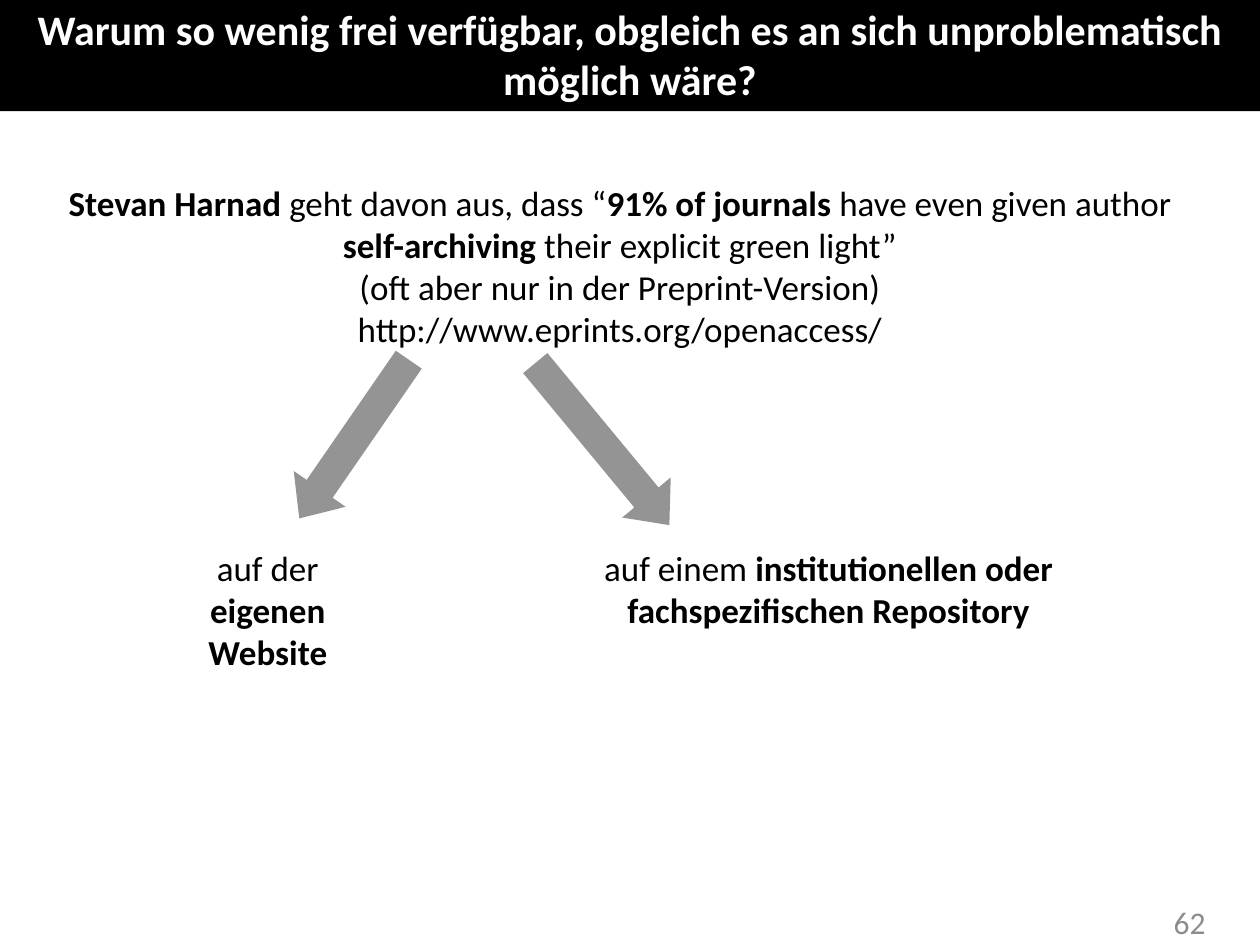
"""Build the slide on freely available publications and self-archiving."""
from lxml import etree
from pptx import Presentation
from pptx.dml.color import RGBColor
from pptx.enum.shapes import MSO_SHAPE
from pptx.enum.text import MSO_ANCHOR, MSO_AUTO_SIZE, PP_ALIGN
from pptx.oxml.ns import qn
from pptx.util import Pt

CENTER, RIGHT = PP_ALIGN.CENTER, PP_ALIGN.RIGHT
TOP, MIDDLE = MSO_ANCHOR.TOP, MSO_ANCHOR.MIDDLE
NO_AUTOFIT = MSO_AUTO_SIZE.NONE
DOWN_ARROW = MSO_SHAPE.DOWN_ARROW
TITLE_ONLY = 5
FONT = "Calibri"
COLORS = {"black": "000000", "white": "FFFFFF", "number": "8C8C8C"}


def color(name):
    return RGBColor.from_string(COLORS[name])


def place(shape, left, top, width, height):
    shape.left, shape.top = Pt(left), Pt(top)
    shape.width, shape.height = Pt(width), Pt(height)


def write_text(shape, paragraphs, size=20, fill="black", align=CENTER, anchor=TOP):
    """Write paragraphs given as lists of (text, bold) runs."""
    frame = shape.text_frame
    frame.word_wrap = True
    frame.auto_size = NO_AUTOFIT
    frame.vertical_anchor = anchor
    for index, runs in enumerate(paragraphs):
        paragraph = frame.add_paragraph() if index else frame.paragraphs[0]
        paragraph.alignment = align
        for text, bold in runs:
            run = paragraph.add_run()
            run.text = text
            run.font.name = FONT
            run.font.size = Pt(size)
            run.font.bold = bold
            run.font.color.rgb = color(fill)


def add_title(slide, text):
    title = slide.shapes.title
    place(title, 0, -2, 720, 65.5)
    title.fill.solid()
    title.fill.fore_color.rgb = color("black")
    write_text(title, [[(text, True)]], size=24, fill="white", anchor=MIDDLE)


def add_text(slide, box, paragraphs, **text_format):
    shape = slide.shapes.add_textbox(*map(Pt, box))
    write_text(shape, paragraphs, **text_format)


def add_arrow(slide, box, rotation, opacity=42):
    arrow = slide.shapes.add_shape(DOWN_ARROW, *map(Pt, box))
    arrow.shadow.inherit = False
    arrow.rotation = rotation
    arrow.adjustments[0] = 0.5
    arrow.adjustments[1] = 0.57
    arrow.fill.solid()
    arrow.fill.fore_color.rgb = color("black")
    arrow.line.fill.background()
    solid_color = arrow.fill._xPr.find(qn("a:solidFill"))[0]
    etree.SubElement(solid_color, qn("a:alpha")).set("val", str(opacity * 1000))


def main():
    presentation = Presentation()
    presentation.slide_width, presentation.slide_height = Pt(720), Pt(540)
    slide = presentation.slides.add_slide(presentation.slide_layouts[TITLE_ONLY])

    add_title(slide, "Warum so wenig frei verfügbar, obgleich es an sich "
                     "unproblematisch möglich wäre?")
    add_text(slide, (31, 100, 646.5, 104.5), [
        [("Stevan Harnad ", True), ("geht davon aus, dass “", False),
         ("91% of journals ", True), ("have even given author ", False),
         ("self-archiving", True), (" their explicit green light”", False)],
        [("(oft aber nur in der Preprint-Version)", False)],
        [("http://www.eprints.org/openaccess/", False)],
    ])
    add_text(slide, (82, 309, 142, 80),
             [[("auf der ", False), ("eigenen Website", True)]])
    add_text(slide, (309, 309, 329, 55.5),
             [[("auf einem ", False),
               ("institutionellen oder fachspezifischen Repository", True)]])
    add_arrow(slide, (184.3, 195.8, 36, 110.2), 34.6)
    add_arrow(slide, (326.2, 193.7, 36, 120.2), 320.4)
    add_text(slide, (528, 512.5, 168, 29), [[("62", False)]],
             size=18, fill="number", align=RIGHT, anchor=MIDDLE)
    presentation.save("out.pptx")


if __name__ == "__main__":
    main()
